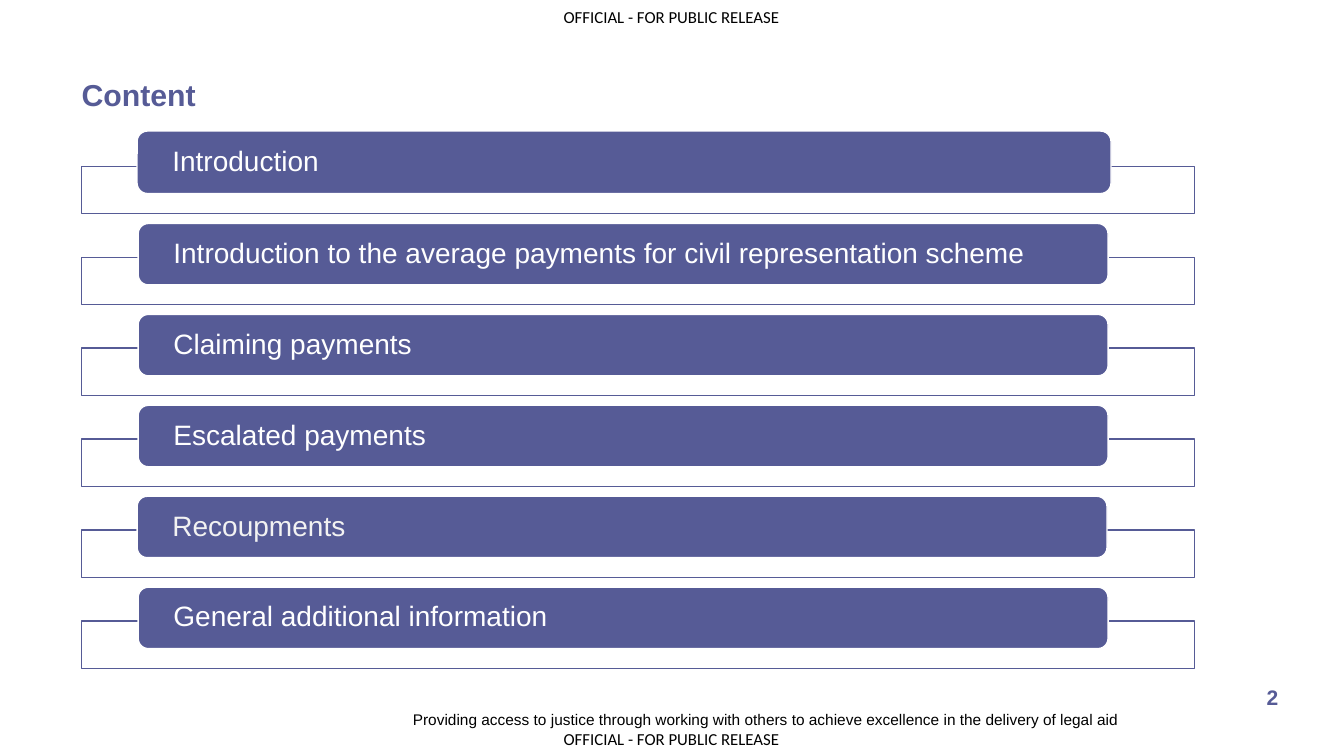
from lxml.etree import SubElement
from pptx import Presentation
from pptx.dml.color import RGBColor
from pptx.enum.shapes import MSO_SHAPE as Shape
from pptx.enum.text import MSO_ANCHOR as Anchor, PP_ALIGN as Align
from pptx.oxml.ns import qn
from pptx.util import Inches, Pt

# Content
MARK = "OFFICIAL - FOR PUBLIC RELEASE"
MOTTO = ("Providing access to justice through working with others "
         "to achieve excellence in the delivery of legal aid")
PURPLE, WHITE, PALE, BLACK = "565B96", "FFFFFF", "F2F2F2", "000000"

# Topic, text colour, bar left, bar width, bar height
TOPICS = [
    ("Introduction", WHITE, 1.36, 9.66, 0.62),
    ("Introduction to the average payments for civil representation scheme",
     WHITE, 1.37, 9.62, 0.61),
    ("Claiming payments", WHITE, 1.37, 9.62, 0.61),
    ("Escalated payments", WHITE, 1.37, 9.62, 0.61),
    ("Recoupments", PALE, 1.36, 9.62, 0.61),
    ("General additional information", WHITE, 1.37, 9.62, 0.61),
]

# Text, box, font, size, colour, bold, alignment, wrap
LABELS = [
    (MARK, (5.59, 0.07, 2.18, 0.2), "Calibri", 12, BLACK, False, Align.LEFT, False),
    (MARK, (5.59, 7.23, 2.18, 0.2), "Calibri", 12, BLACK, False, Align.LEFT, False),
    ("Content", (0.81, 0.76, 8.44, 0.38), "Arial", 21.6, PURPLE, True, Align.LEFT, True),
    ("2", (12.47, 6.79, 0.3, 0.28), "Arial", 15, PURPLE, True, Align.CENTER, True),
    (MOTTO, (3.22, 7.05, 7.88, 0.2), "Arial", 11, BLACK, False, Align.RIGHT, True),
]

# Layout of the list
LEFT, WIDTH, DEPTH = 0.81, 11.04, 0.47
TOP, STEP, RISE = 1.65, 0.902, 0.335
INSET = 0.32

deck = Presentation()
deck.slide_width, deck.slide_height = Inches(13.33), Inches(7.5)
slide = deck.slides.add_slide(deck.slide_layouts[6])


def color(code):
    return RGBColor.from_string(code)


def write(shape, text, font, size, code, bold=False, align=Align.LEFT,
          wrap=True, inset=0, anchor=Anchor.TOP):
    frame = shape.text_frame
    frame.word_wrap = wrap
    frame.vertical_anchor = anchor
    frame.margin_left = frame.margin_right = Inches(inset)
    frame.margin_top = frame.margin_bottom = 0
    para = frame.paragraphs[0]
    para.text, para.alignment = text, align
    para.font.name, para.font.size, para.font.bold = font, Pt(size), bold
    para.font.color.rgb = color(code)
    return para


def block(kind, box, fill, line):
    shape = slide.shapes.add_shape(kind, *map(Inches, box))
    shape.shadow.inherit = False
    shape.fill.solid()
    shape.fill.fore_color.rgb = color(fill)
    shape.line.color.rgb = color(line)
    shape.line.width = Pt(1)
    return shape


# Title, markings and footer
for text, box, *style in LABELS:
    write(slide.shapes.add_textbox(*map(Inches, box)), text, *style)

# Topic bars, each over an outlined frame
for row, (text, code, left, width, height) in enumerate(TOPICS):
    top = TOP + row * STEP
    frame = block(Shape.RECTANGLE, (LEFT, top, WIDTH, DEPTH), WHITE, PURPLE)
    tint = frame.fill._xPr.find(".//" + qn("a:srgbClr"))
    SubElement(tint, qn("a:alpha"), val="90000")
    lift = RISE + (0.015 if row == 0 else 0)
    bar = block(Shape.ROUNDED_RECTANGLE, (left, top - lift, width, height), PURPLE, WHITE)
    para = write(bar, text, "Arial", 20, code, inset=INSET, anchor=Anchor.MIDDLE)
    para.line_spacing = 0.9

deck.save("out.pptx")
